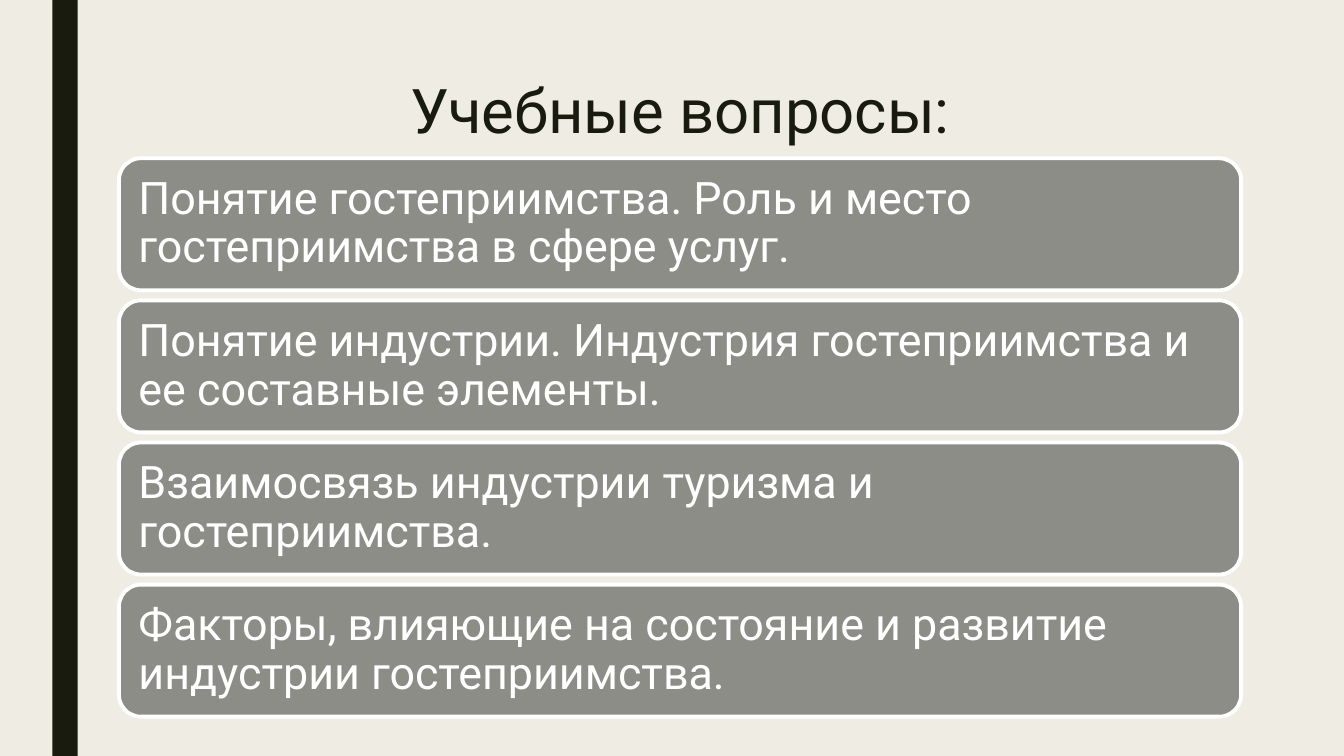
"""Build the slide that lists the study questions of a hospitality lecture."""
from pptx import Presentation
from pptx.dml.color import RGBColor
from pptx.enum.shapes import MSO_SHAPE
from pptx.enum.text import MSO_ANCHOR, PP_ALIGN
from pptx.util import Inches, Pt

RECTANGLE = MSO_SHAPE.RECTANGLE
ROUNDED = MSO_SHAPE.ROUNDED_RECTANGLE
TOP, MIDDLE = MSO_ANCHOR.TOP, MSO_ANCHOR.MIDDLE
LEFT, CENTER = PP_ALIGN.LEFT, PP_ALIGN.CENTER

TITLE = "Учебные вопросы:"
QUESTIONS = [
    "Понятие гостеприимства. Роль и место гостеприимства в сфере услуг.",
    "Понятие индустрии. Индустрия гостеприимства и ее составные элементы.",
    "Взаимосвязь индустрии туризма и гостеприимства.",
    "Факторы, влияющие на состояние и развитие индустрии гостеприимства.",
]
FONT = "Roboto"
CREAM, DARK, GREY, WHITE = "EFEDE3", "191B0E", "8C8D86", "FFFFFF"
CARD_LEFT, CARD_TOP, CARD_WIDTH, CARD_HEIGHT = 1.18, 1.57, 11.13, 1.31
CARD_PITCH = 1.41
CARD_INSET = Inches(0.13)


def paint(fill, color):
    fill.solid()
    fill.fore_color.rgb = RGBColor.from_string(color)


def add_block(slide, kind, box, color):
    shape = slide.shapes.add_shape(kind, *map(Inches, box))
    shape.shadow.inherit = False
    paint(shape.fill, color)
    shape.line.fill.background()
    return shape


def write(shape, text, size, color, alignment, anchor, spacing):
    frame = shape.text_frame
    frame.word_wrap = True
    frame.vertical_anchor = anchor
    paragraph = frame.paragraphs[0]
    paragraph.text = text
    paragraph.alignment = alignment
    paragraph.line_spacing = spacing
    paragraph.font.name = FONT
    paragraph.font.size = Pt(size)
    paragraph.font.color.rgb = RGBColor.from_string(color)


def add_card(slide, index, question):
    top = CARD_TOP + index * CARD_PITCH
    card = add_block(slide, ROUNDED, (CARD_LEFT, top, CARD_WIDTH, CARD_HEIGHT), GREY)
    paint(card.line.fill, WHITE)
    card.line.width = Pt(2.75)
    frame = card.text_frame
    frame.margin_left = frame.margin_right = CARD_INSET
    frame.margin_top = frame.margin_bottom = CARD_INSET
    write(card, question, 32, WHITE, LEFT, MIDDLE, 0.9)


def main():
    presentation = Presentation()
    presentation.slide_width = Inches(13.33)
    presentation.slide_height = Inches(7.5)
    slide = presentation.slides.add_slide(presentation.slide_layouts[6])
    paint(slide.background.fill, CREAM)
    add_block(slide, RECTANGLE, (0.52, 0, 0.25, 7.5), DARK)
    title = slide.shapes.add_textbox(*map(Inches, (1.5, 0.75, 10.5, 1.62)))
    write(title, TITLE, 44, DARK, CENTER, TOP, 0.89)
    for index, question in enumerate(QUESTIONS):
        add_card(slide, index, question)
    presentation.save("out.pptx")


if __name__ == "__main__":
    main()
